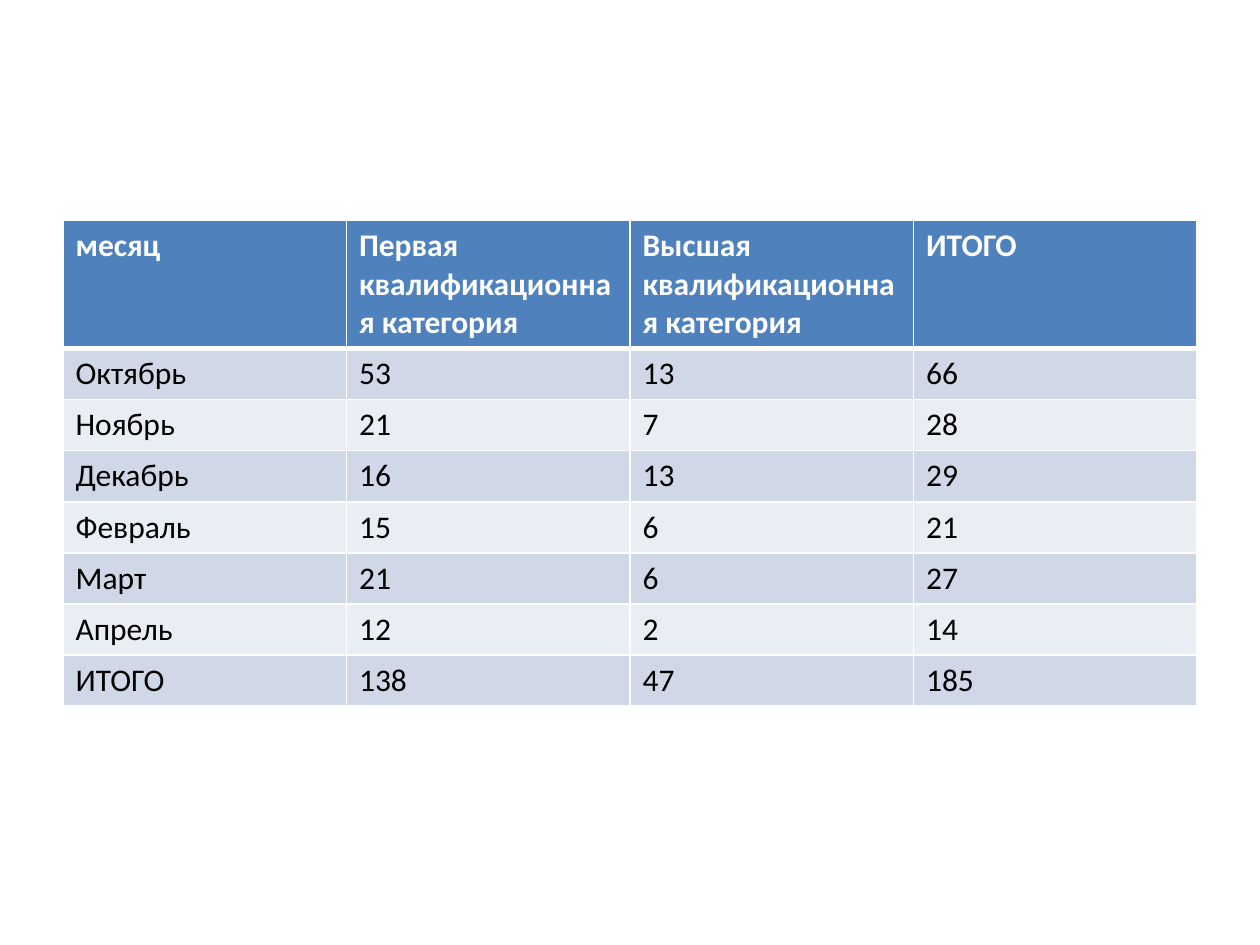
from lxml import etree
from pptx import Presentation
from pptx.dml.color import RGBColor
from pptx.oxml.ns import qn
from pptx.util import Inches, Pt

FONT = "Calibri"
WHITE, BLACK = "FFFFFF", "000000"
HEADER_FILL = "4F81BD"
BAND_FILLS = ("E9EDF4", "D0D8E8")

ROWS = [
    ("месяц", "Первая квалификационная категория",
     "Высшая квалификационная категория", "ИТОГО"),
    ("Октябрь", "53", "13", "66"),
    ("Ноябрь", "21", "7", "28"),
    ("Декабрь", "16", "13", "29"),
    ("Февраль", "15", "6", "21"),
    ("Март", "21", "6", "27"),
    ("Апрель", "12", "2", "14"),
    ("ИТОГО", "138", "47", "185"),
]


def rgb(color):
    return RGBColor.from_string(color)


def add_border(cell, side, color, width):
    """Draw one cell border; side is L, R, T or B, width is in points."""
    properties = cell._tc.get_or_add_tcPr()
    line = etree.SubElement(properties, qn(f"a:ln{side}"), w=str(Pt(width)))
    fill = etree.SubElement(line, qn("a:solidFill"))
    etree.SubElement(fill, qn("a:srgbClr"), val=color)


presentation = Presentation()
presentation.slide_width = Inches(10)
presentation.slide_height = Inches(7.5)
slide = presentation.slides.add_slide(presentation.slide_layouts[6])

table_height = Inches(3.84)
header_height = Inches(1.01)
table = slide.shapes.add_table(
    len(ROWS), len(ROWS[0]), Inches(0.5), Inches(1.75), Inches(9), table_height
).table
body_row_height = (table_height - header_height) // (len(ROWS) - 1)

for row_index, values in enumerate(ROWS):
    is_header = row_index == 0
    table.rows[row_index].height = header_height if is_header else body_row_height
    border_widths = {
        "L": 1,
        "R": 1,
        "T": 3 if row_index == 1 else 1,
        "B": 3 if is_header else 1,
    }
    for column_index, value in enumerate(values):
        cell = table.cell(row_index, column_index)
        for side, width in border_widths.items():
            add_border(cell, side, WHITE, width)
        cell.fill.solid()
        cell.fill.fore_color.rgb = rgb(HEADER_FILL if is_header else BAND_FILLS[row_index % 2])

        cell.text_frame.text = value
        font = cell.text_frame.paragraphs[0].runs[0].font
        font.name = FONT
        font.size = Pt(18)
        font.bold = is_header
        font.color.rgb = rgb(WHITE if is_header else BLACK)

presentation.save("out.pptx")
